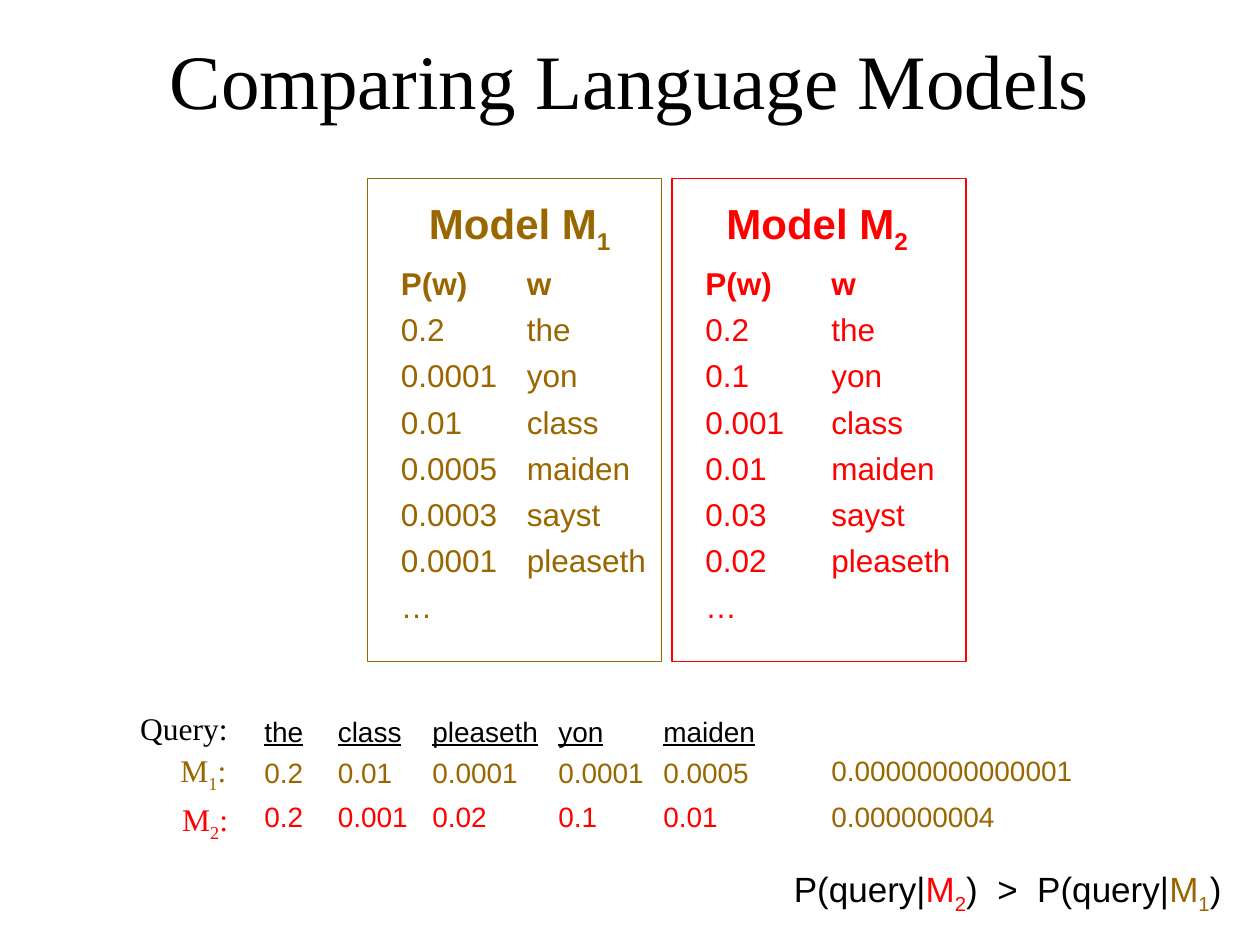
from lxml.etree import SubElement
from pptx import Presentation
from pptx.dml.color import RGBColor
from pptx.enum.shapes import MSO_SHAPE
from pptx.enum.text import MSO_ANCHOR, MSO_AUTO_SIZE, PP_ALIGN
from pptx.oxml.ns import qn
from pptx.util import Pt

INK = {"black": "000000", "gold": "996600", "red": "FF0000"}
SANS, SERIF = "Arial", "Times New Roman"


class Deck:
    def __init__(self):
        self.prs = Presentation()
        self.prs.slide_width, self.prs.slide_height = Pt(720), Pt(540)
        self.slide = self.prs.slides.add_slide(self.prs.slide_layouts[5])

    def run(self, para, text, ink, size, name=SANS, sub=False, **style):
        run = para.add_run()
        run.text = text
        for key, val in {"size": Pt(size), "name": name, **style}.items():
            setattr(run.font, key, val)
        run.font.color.rgb = RGBColor.from_string(INK[ink])
        if sub:
            run._r.get_or_add_rPr().set("baseline", "-25000")

    def title(self, text, *area):
        shape = self.slide.shapes.title
        shape.left, shape.top, shape.width, shape.height = map(Pt, area)
        shape.text_frame.vertical_anchor = MSO_ANCHOR.MIDDLE
        para = shape.text_frame.paragraphs[0]
        para.alignment = PP_ALIGN.CENTER
        self.run(para, text, "black", 44, SERIF)

    def frame(self, ink, *area):
        shape = self.slide.shapes.add_shape(MSO_SHAPE.RECTANGLE, *map(Pt, area))
        shape.shadow.inherit = False
        shape.fill.background()
        shape.line.color.rgb = RGBColor.from_string(INK[ink])
        shape.line.width = Pt(0.75)

    def box(self, area, wrap=True):
        body = self.slide.shapes.add_textbox(*map(Pt, area)).text_frame
        body.word_wrap = wrap
        body.auto_size = MSO_AUTO_SIZE.SHAPE_TO_FIT_TEXT
        return body

    def text(self, area, parts, size, wrap=True, align=PP_ALIGN.LEFT, **style):
        """Write one line; each part is text, ink and, if lowered, True."""
        para = self.box(area, wrap).paragraphs[0]
        para.alignment = align
        for text, ink, *sub in parts:
            self.run(para, text, ink, size, sub=bool(sub), **style)

    def tab(self, para, pos):
        """Set a left tab stop; call it after the spacing is set."""
        stops = SubElement(para._p.get_or_add_pPr(), qn("a:tabLst"))
        SubElement(stops, qn("a:tab"), pos=str(Pt(pos)), algn="l")

    def list(self, area, rows, ink):
        """Write tabbed rows under a bold first row."""
        body = self.box(area)
        for i, row in enumerate(rows):
            para = body.add_paragraph() if i else body.paragraphs[0]
            para.line_spacing = 0.8
            if i:
                para.space_before = Pt(9)
            self.tab(para, 72)
            self.run(para, "\t".join(row), ink, 18, bold=i == 0)


WORDS = ["the", "yon", "class", "maiden", "sayst", "pleaseth"]
MODELS = [
    ("1", "gold", PP_ALIGN.CENTER,
     ["0.2", "0.0001", "0.01", "0.0005", "0.0003", "0.0001"]),
    ("2", "red", PP_ALIGN.LEFT,
     ["0.2", "0.1", "0.001", "0.01", "0.03", "0.02"]),
]
QUERY = [  # left edge, word
    (144, "the"), (186, "class"), (240, "pleaseth"), (312, "yon"), (372, "maiden"),
]
TOPS = [428, 453.5]
LABELS = [(96, 425.5), (97, 453.5)]
SCORES = [("0.00000000000001", 427, 153.5), ("0.000000004", 453.5, 109)]


def main():
    deck = Deck()
    deck.title("Comparing Language Models", 54, 0, 612, 90)

    for i, (num, ink, align, probs) in enumerate(MODELS):
        x = 210 + i * 174
        rows = [("P(w)", "w"), *zip(probs, WORDS), ("…",)]
        deck.list((x + 12, 151.75, 192, 221), rows, ink)
        deck.text((x + 24, 109.5, 126, 36),
                  [("Model M", ink), (num, ink, True)], 24, align=align, bold=True)
        deck.frame(ink, x, 102, 168, 276)

    for x, word in QUERY:
        deck.text((x, 404.5, 78, 26.5), [(word, "black")], 16, underline=True)
        for (num, ink, align, probs), top in zip(MODELS, TOPS):
            prob = probs[WORDS.index(word)]
            deck.text((x, top, 70, 26.5), [(prob, ink)], 16)

    deck.text((446.5, 492, 264, 31.5), [
        ("P(query|", "black"), ("M", "red"), ("2", "red", True),
        (")  >  P(query|", "black"), ("M", "gold"), ("1", "gold", True),
        (")", "black")], 20)

    deck.text((73, 401.5, 65, 29), [("Query:", "black")], 18, False, name=SERIF)
    for (num, ink, *rest), (x, y) in zip(MODELS, LABELS):
        deck.text((x, y, 42, 29), [("M", ink), (num, ink, True), (":", ink)],
                  18, False, name=SERIF)
    for text, y, wide in SCORES:
        deck.text((468, y, wide, 26.5), [(text, "gold")], 16, False)

    deck.prs.save("out.pptx")


if __name__ == "__main__":
    main()
